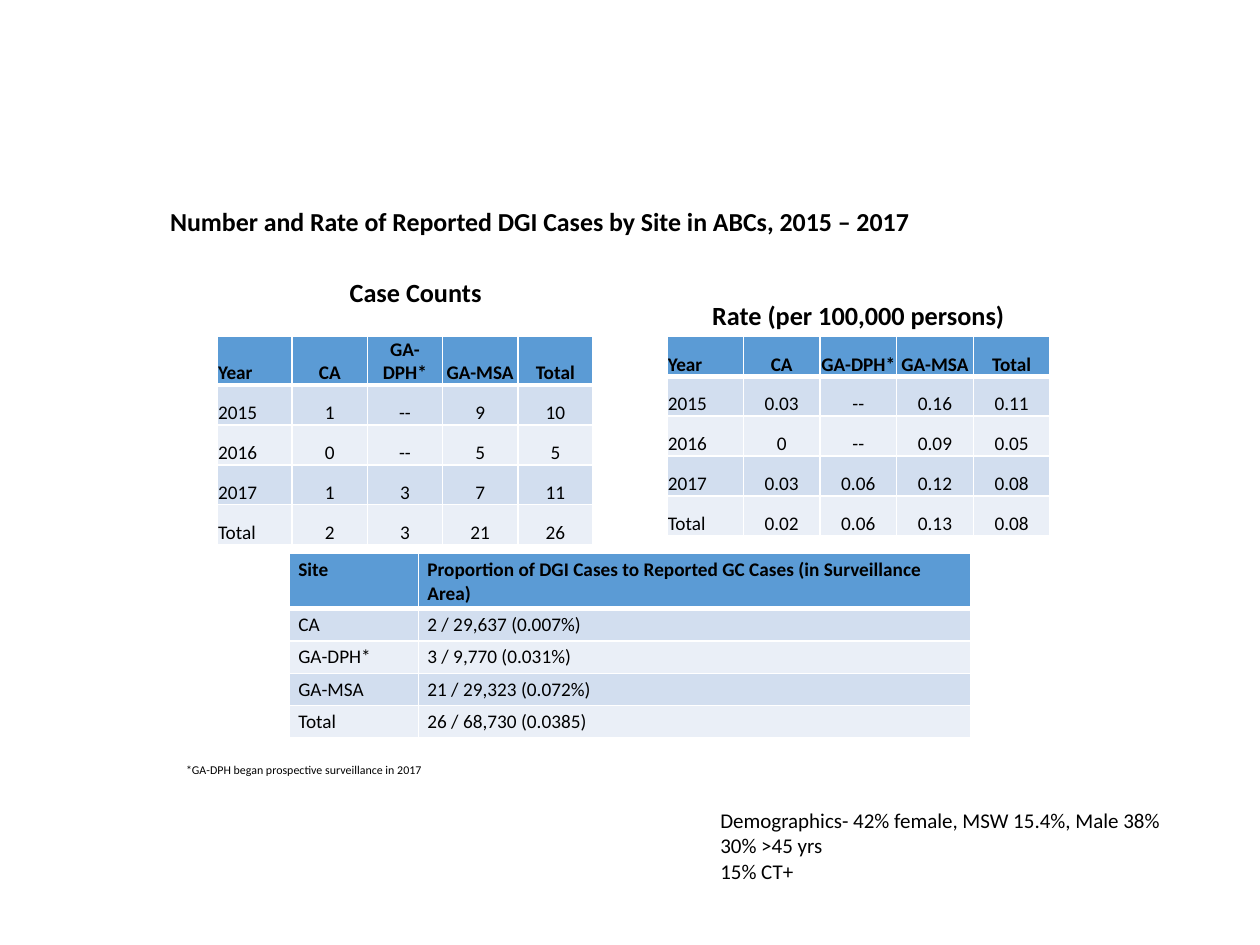
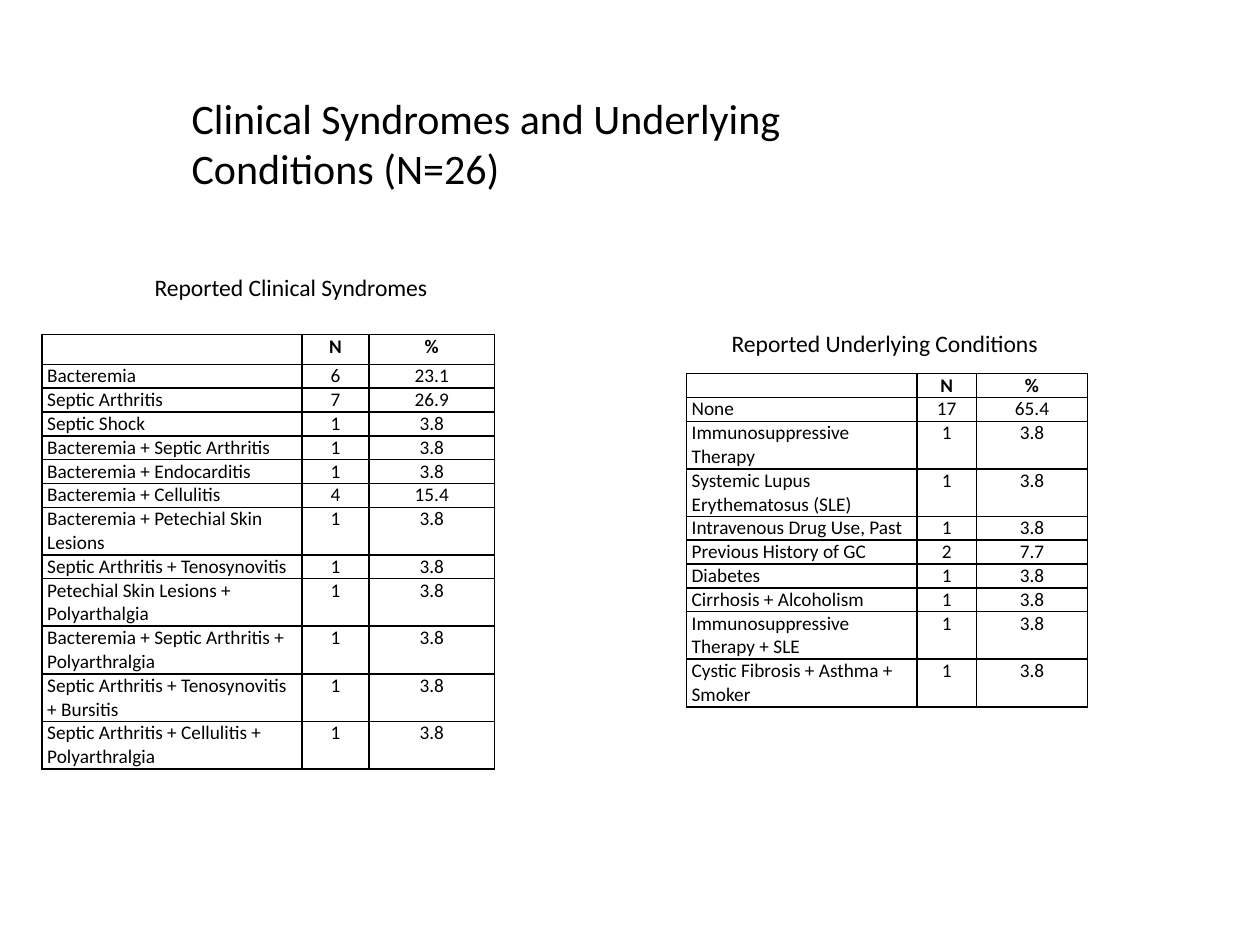
from lxml import etree
from pptx import Presentation
from pptx.dml.color import RGBColor
from pptx.enum.text import MSO_ANCHOR, MSO_AUTO_SIZE, PP_ALIGN
from pptx.oxml.ns import qn
from pptx.util import Pt

LEFT, CENTER = PP_ALIGN.LEFT, PP_ALIGN.CENTER
TOP, BOTTOM = MSO_ANCHOR.TOP, MSO_ANCHOR.BOTTOM
FIXED, GROW = MSO_AUTO_SIZE.NONE, MSO_AUTO_SIZE.SHAPE_TO_FIT_TEXT
TWO_CONTENT, TITLE_ONLY = 3, 5

FONT = "Calibri"
TABLE_SIZE = 11
COLORS = {
    "text": "000000",
    "grid": "000000",
    "rule": "FFFFFF",
    "header": "5B9BD5",
    "band_dark": "D2DEEF",
    "band_light": "EAEFF7",
}

SITE_HEADER = ("Year", "CA", "GA-DPH*", "GA-MSA", "Total")
CASE_COUNTS = [
    SITE_HEADER,
    ("2015", "1", "--", "9", "10"),
    ("2016", "0", "--", "5", "5"),
    ("2017", "1", "3", "7", "11"),
    ("Total", "2", "3", "21", "26"),
]
CASE_RATES = [
    SITE_HEADER,
    ("2015", "0.03", "--", "0.16", "0.11"),
    ("2016", "0", "--", "0.09", "0.05"),
    ("2017", "0.03", "0.06", "0.12", "0.08"),
    ("Total", "0.02", "0.06", "0.13", "0.08"),
]
PROPORTIONS = [
    ("Site", "Proportion of DGI Cases to Reported GC Cases (in Surveillance Area)"),
    ("CA", "2 / 29,637 (0.007%)"),
    ("GA-DPH*", "3 / 9,770 (0.031%)"),
    ("GA-MSA", "21 / 29,323 (0.072%)"),
    ("Total", "26 / 68,730 (0.0385)"),
]
CLINICAL_HEADER = ("", "N", "%")
SYNDROMES = [
    CLINICAL_HEADER,
    ("Bacteremia", "6", "23.1"),
    ("Septic Arthritis", "7", "26.9"),
    ("Septic Shock", "1", "3.8"),
    ("Bacteremia + Septic Arthritis", "1", "3.8"),
    ("Bacteremia + Endocarditis", "1", "3.8"),
    ("Bacteremia + Cellulitis", "4", "15.4"),
    ("Bacteremia + Petechial Skin Lesions", "1", "3.8"),
    ("Septic Arthritis + Tenosynovitis", "1", "3.8"),
    ("Petechial Skin Lesions + Polyarthalgia", "1", "3.8"),
    ("Bacteremia + Septic Arthritis + Polyarthralgia", "1", "3.8"),
    ("Septic Arthritis + Tenosynovitis + Bursitis", "1", "3.8"),
    ("Septic Arthritis + Cellulitis + Polyarthralgia", "1", "3.8"),
]
SYNDROME_LINES = (1, 1, 1, 1, 1, 1, 2, 1, 2, 2, 2, 2)
CONDITIONS = [
    CLINICAL_HEADER,
    ("None", "17", "65.4"),
    ("Immunosuppressive Therapy", "1", "3.8"),
    ("Systemic Lupus Erythematosus (SLE)", "1", "3.8"),
    ("Intravenous Drug Use, Past", "1", "3.8"),
    ("Previous History of GC", "2", "7.7"),
    ("Diabetes", "1", "3.8"),
    ("Cirrhosis + Alcoholism", "1", "3.8"),
    ("Immunosuppressive Therapy + SLE", "1", "3.8"),
    ("Cystic Fibrosis + Asthma + Smoker", "1", "3.8"),
]
CONDITION_LINES = (1, 2, 2, 1, 1, 1, 1, 2, 2)


# Text
def add_run(p, text, size, bold=False):
    r = p.add_run()
    r.text = text
    r.font.name = FONT
    r.font.size = Pt(size)
    r.font.bold = bold
    r.font.color.rgb = RGBColor.from_string(COLORS["text"])


def place(sp, x, y, w, h):
    sp.left, sp.top, sp.width, sp.height = Pt(x), Pt(y), Pt(w), Pt(h)


def fill_placeholder(sp, box, text, size, bold, align, anchor):
    place(sp, *box)
    tf = sp.text_frame
    tf.auto_size = FIXED
    tf.word_wrap = True
    tf.vertical_anchor = anchor
    p = tf.paragraphs[0]
    p.alignment = align
    add_run(p, text, size, bold)
    return p


def add_table_heading(sp, box, text):
    p = fill_placeholder(sp, box, text, 15, True, CENTER, TOP)
    p.line_spacing = 0.9
    p.space_before = Pt(10)
    pPr = p._p.get_or_add_pPr()
    pPr.set("marL", "0")
    pPr.set("indent", "0")
    etree.SubElement(pPr, qn("a:buNone"))


def add_text(slide, box, lines, size):
    sp = slide.shapes.add_textbox(*map(Pt, box))
    tf = sp.text_frame
    tf.word_wrap = True
    tf.auto_size = GROW
    for i, line in enumerate(lines):
        p = tf.paragraphs[0] if i == 0 else tf.add_paragraph()
        add_run(p, line, size)


# Tables
def set_borders(cell, color, bottom_width=1):
    tcPr = cell._tc.get_or_add_tcPr()
    for side in "LRTB":
        width = bottom_width if side == "B" else 1
        ln = etree.SubElement(tcPr, qn(f"a:ln{side}"), w=str(Pt(width)))
        fill = etree.SubElement(ln, qn("a:solidFill"))
        etree.SubElement(fill, qn("a:srgbClr"), val=color)


def set_cell_text(cell, text, bold, align, anchor, insets):
    cell.margin_left = cell.margin_right = Pt(insets[0])
    cell.margin_top, cell.margin_bottom = Pt(insets[1]), Pt(insets[2])
    cell.vertical_anchor = anchor
    p = cell.text_frame.paragraphs[0]
    p.alignment = align
    if text:
        add_run(p, text, TABLE_SIZE, bold)
    else:
        etree.SubElement(p._p, qn("a:endParaRPr"), sz=str(TABLE_SIZE * 100))


def add_data_table(slide, x, y, widths, heights, data, insets,
                   anchor=TOP, value_align=CENTER, banded=True):
    frame = slide.shapes.add_table(len(data), len(widths), Pt(x), Pt(y),
                                   Pt(sum(widths)), Pt(sum(heights)))
    table = frame.table
    table.first_row = table.horz_banding = False
    for column, width in zip(table.columns, widths):
        column.width = Pt(width)
    for i, (row, height) in enumerate(zip(data, heights)):
        table.rows[i].height = Pt(height)
        for j, text in enumerate(row):
            cell = table.cell(i, j)
            align = value_align if j else LEFT
            set_cell_text(cell, text, i == 0, align, anchor, insets)
            if banded:
                # The thick rule is shared by the header and the first data row
                set_borders(cell, COLORS["rule"], 3 if i == 0 else 1)
                band = "header" if i == 0 else "band_dark" if i % 2 else "band_light"
                cell.fill.solid()
                cell.fill.fore_color.rgb = RGBColor.from_string(COLORS[band])
            else:
                set_borders(cell, COLORS["grid"])
                cell.fill.background()


def add_site_table(slide, x, column_width, header_height, data):
    add_data_table(slide, x, 192.25, [column_width] * 5,
                   [header_height] + [22.8] * 4, data, (0.6, 0.6, 0), BOTTOM)


def add_clinical_table(slide, x, y, widths, header_height, line_height, lines, data):
    heights = [header_height] + [line_height * n for n in lines]
    add_data_table(slide, x, y, widths, heights, data, (3, 0, 0), banded=False)


# Slides
def build_cases_slide(prs):
    s = prs.slides.add_slide(prs.slide_layouts[TWO_CONTENT])
    title = fill_placeholder(
        s.shapes.title, (90, 102.25, 486, 36.75),
        "Number and Rate of Reported DGI Cases by Site in ABCs, 2015 – 2017",
        14.8, True, LEFT, BOTTOM)
    title.line_spacing = Pt(30)
    add_table_heading(s.placeholders[1], (123, 156.25, 229, 186), "Case Counts")
    add_table_heading(s.placeholders[2], (376, 169.25, 229, 186),
                      "Rate (per 100,000 persons)")
    add_site_table(s, 124, 43, 27.4, CASE_COUNTS)
    add_site_table(s, 381, 43.8, 22.8, CASE_RATES)
    add_text(s, (99.25, 432, 452, 15),
             ["*GA-DPH began prospective surveillance in 2017"], 6.8)
    add_data_table(s, 165.5, 316.25, [73.75, 315.5], [31.5] + [18.5] * 4,
                   PROPORTIONS, (5, 2.5, 2.5), value_align=LEFT)
    add_text(s, (404.5, 458, 292.5, 51),
             ["Demographics- 42% female, MSW 15.4%, Male 38%",
              "30% >45 yrs", "15% CT+"], 12)


def build_clinical_slide(prs):
    s = prs.slides.add_slide(prs.slide_layouts[TITLE_ONLY])
    fill_placeholder(s.shapes.title, (102.25, 49, 360, 65.5),
                     "Clinical Syndromes and Underlying Conditions (N=26)",
                     24, False, LEFT, TOP)
    add_clinical_table(s, 24, 191.25, (148.5, 38.5, 71.5), 17, 13.25,
                       SYNDROME_LINES, SYNDROMES)
    add_clinical_table(s, 392.25, 213.5, (131.75, 34, 63.5), 13.5, 13.45,
                       CONDITION_LINES, CONDITIONS)
    add_text(s, (81.25, 152.5, 193, 24), ["Reported Clinical Syndromes"], 13.5)
    add_text(s, (411, 184.5, 192.5, 24), ["Reported Underlying Conditions"], 13.5)


def main():
    prs = Presentation()
    prs.slide_width, prs.slide_height = Pt(720), Pt(540)
    build_cases_slide(prs)
    build_clinical_slide(prs)
    prs.save("out.pptx")


if __name__ == "__main__":
    main()
